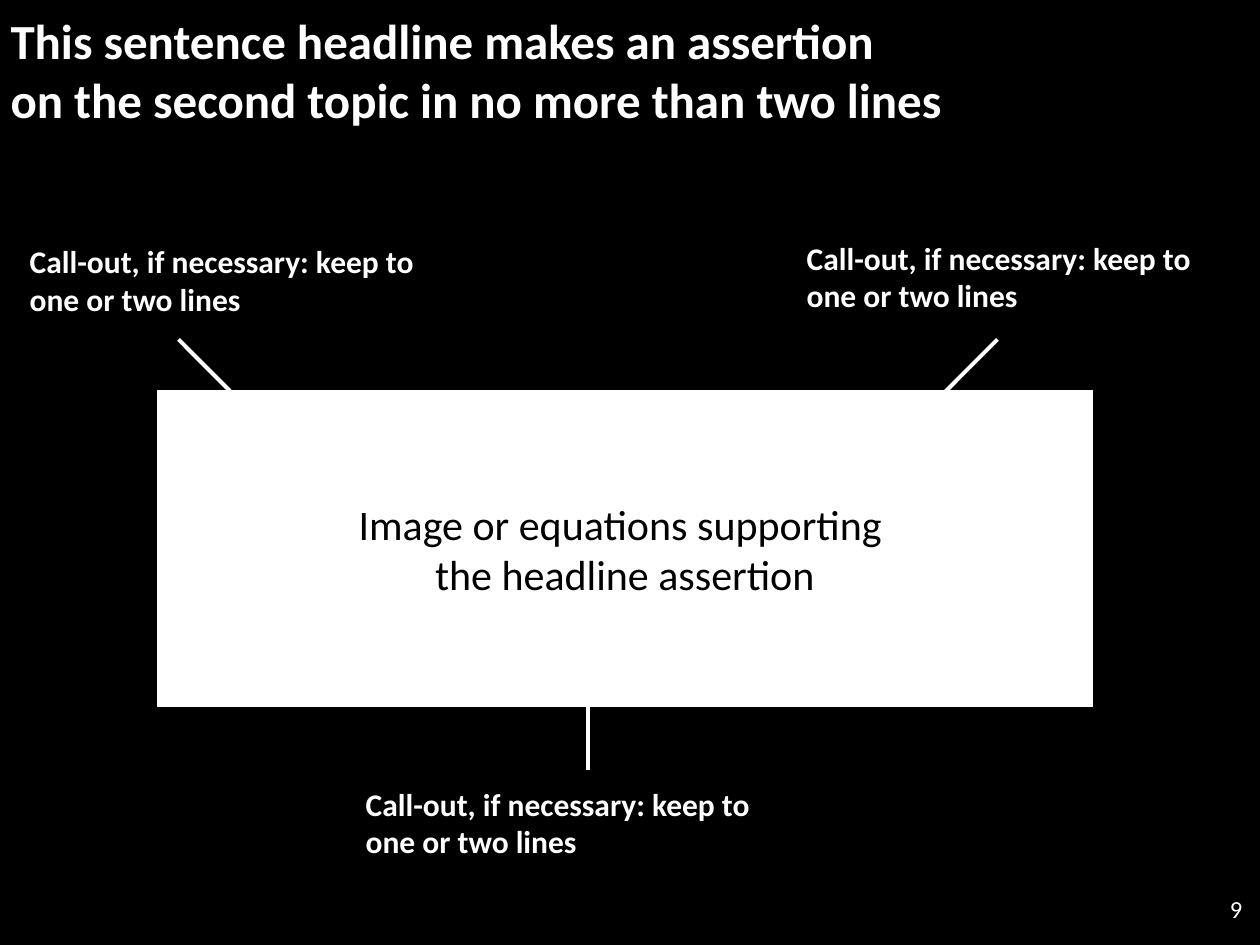
from pptx import Presentation
from pptx import util as u
from pptx.dml.color import RGBColor
from pptx.enum import shapes, text
from pptx.oxml.ns import qn
from lxml import etree

WHITE, BLACK = "FFFFFF", "000000"
NOTE = "Call-out, if necessary: keep to one or two lines"


def paint(fill, hue):
    fill.solid()
    fill.fore_color.rgb = RGBColor.from_string(hue)


def write(shape, words, size=18, hue=WHITE, bold=False, align="LEFT",
          anchor="TOP", pad=(0, 0)):
    """Fill a shape with formatted text; pad is (sides, top and bottom)."""
    frame = shape.text_frame
    frame.word_wrap = True
    frame.auto_size = text.MSO_AUTO_SIZE.NONE
    frame.vertical_anchor = getattr(text.MSO_ANCHOR, anchor)
    frame.margin_left = frame.margin_right = u.Pt(pad[0])
    frame.margin_top = frame.margin_bottom = u.Pt(pad[1])
    frame.text = words
    for par in frame.paragraphs:
        par.alignment = getattr(text.PP_ALIGN, align)
        for run in par.runs:
            font = run.font
            font.name, font.size, font.bold = "Calibri", u.Pt(size), bold
            font.color.rgb = RGBColor.from_string(hue)


def head(slide, words):
    title = slide.shapes.title
    title.left, title.top = u.Pt(6), u.Pt(6)
    title.width, title.height = u.Pt(702), u.Pt(68)
    write(title, words, size=28, bold=True)


def label(slide, words, x, y, w, h, **form):
    write(slide.shapes.add_textbox(u.Pt(x), u.Pt(y), u.Pt(w), u.Pt(h)),
          words, **form)


def panel(slide, words, x, y, w, h):
    box = slide.shapes.add_shape(shapes.MSO_SHAPE.RECTANGLE,
                                 u.Pt(x), u.Pt(y), u.Pt(w), u.Pt(h))
    box.shadow.inherit = False
    paint(box.fill, WHITE)
    paint(box.line.fill, WHITE)
    box.line.width = u.Pt(0.75)
    write(box, words, size=24, hue=BLACK, align="CENTER", anchor="MIDDLE",
          pad=(7.2, 3.6))


def lead(slide, *ends):
    line = slide.shapes.add_connector(shapes.MSO_CONNECTOR.STRAIGHT,
                                      *(u.Pt(end) for end in ends))
    paint(line.line.fill, WHITE)
    line.line.width = u.Pt(2.25)
    etree.SubElement(line._element.spPr, qn("a:effectLst"))


def main():
    deck = Presentation()
    deck.slide_width, deck.slide_height = u.Pt(720), u.Pt(540)
    slide = deck.slides.add_slide(deck.slide_layouts[5])
    paint(slide.background.fill, BLACK)

    # Headline
    head(slide, "This sentence headline makes an assertion \v"
                "on the second topic in no more than two lines")

    # Central panel
    panel(slide, "Image or equations supporting \vthe headline assertion",
          90, 223.2, 534.2, 180.7)

    # Call-outs, each with its leader line
    notes = [((12, 136), (102, 194, 132, 224)),
             ((456, 134), (570, 194, 540, 224)),
             ((204, 446), (336, 392, 336, 440))]
    for (x, y), ends in notes:
        label(slide, NOTE, x, y, 258, 47.5, bold=True, pad=(5, 2.4))
        lead(slide, *ends)

    # Slide number
    label(slide, "9", 674, 499, 43, 41, size=14, align="RIGHT",
          anchor="MIDDLE", pad=(7.2, 7.2))

    deck.save("out.pptx")


if __name__ == "__main__":
    main()
